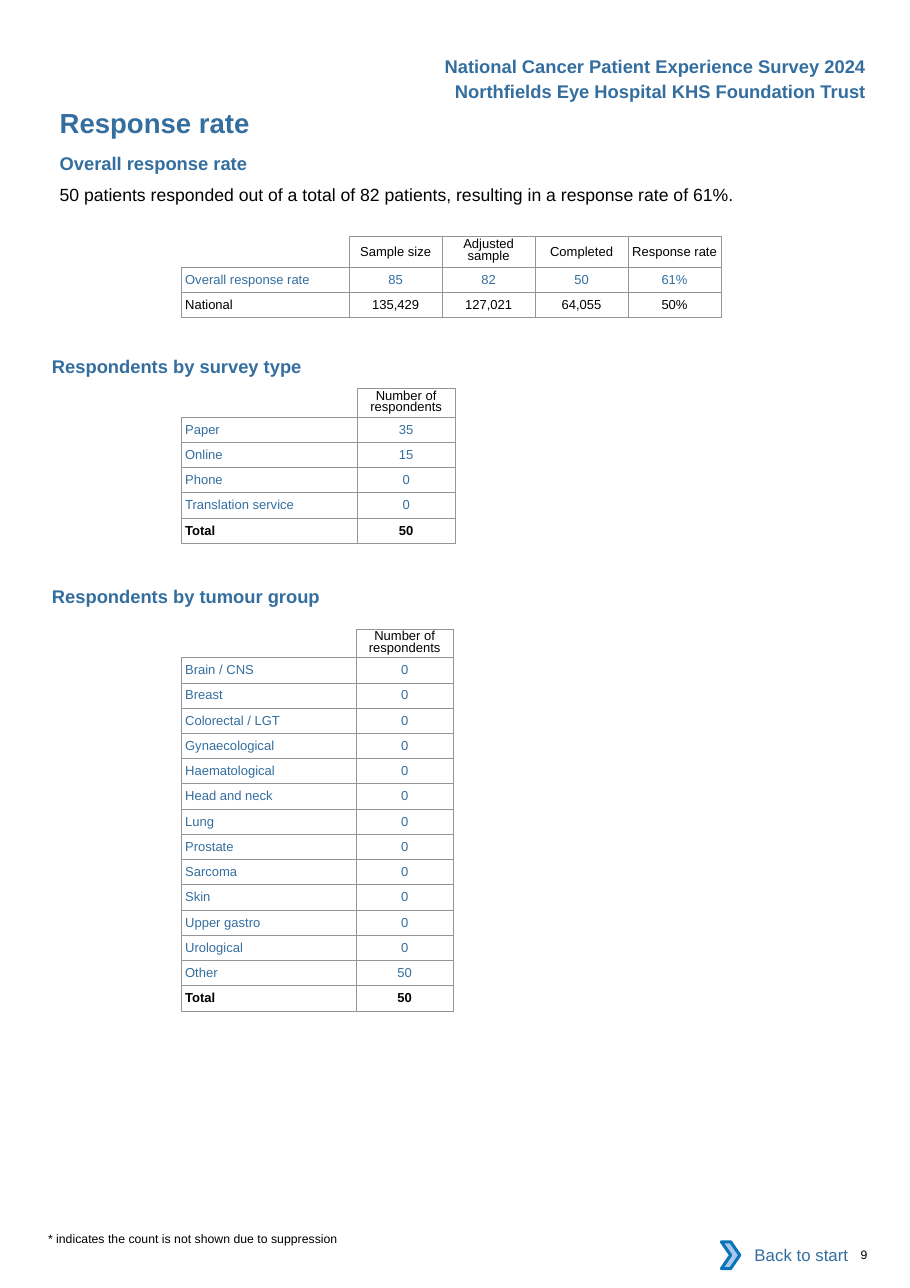
from lxml.etree import SubElement
from pptx import Presentation
from pptx.dml.color import RGBColor
from pptx.enum.shapes import MSO_SHAPE as SHAPE
from pptx.enum.text import MSO_ANCHOR as ANCHOR, PP_ALIGN as ALIGN
from pptx.oxml.ns import qn
from pptx.util import Pt

BLUE = RGBColor(0x33, 0x6E, 0x9F)
BLACK = RGBColor(0, 0, 0)
WHITE = RGBColor(255, 255, 255)
GREY = RGBColor(0x93, 0x95, 0x98)
CHEVRON_FILL = RGBColor(0xA8, 0xC7, 0xE9)
CHEVRON_LINE = RGBColor(0x0A, 0x74, 0xBB)
FONT = "Arial"
ROW_H = 16.5
TABLE_LEFT = 118.5

# Content
TITLE = "Response rate"
# text, left, top, width, height, size, colour, bold, alignment
TEXTS = [
    ("National Cancer Patient Experience Survey 2024", 266, 36.2, 300, 14, 12, BLUE, True, ALIGN.RIGHT),
    ("Northfields Eye Hospital KHS Foundation Trust", 266, 52.5, 300, 14, 12, BLUE, True, ALIGN.RIGHT),
    ("Overall response rate", 39, 99.5, 297, 14, 12, BLUE, True, ALIGN.LEFT),
    ("50 patients responded out of a total of 82 patients, resulting in a response rate of 61%.",
     39, 120.5, 518, 14, 11.5, BLACK, False, ALIGN.LEFT),
    ("Respondents by survey type", 34, 232, 200, 14, 12, BLUE, True, ALIGN.LEFT),
    ("Respondents by tumour group", 34, 382.5, 200, 14, 12, BLUE, True, ALIGN.LEFT),
    ("* indicates the count is not shown due to suppression", 31.4, 804.5, 220, 10, 8, BLACK, False, ALIGN.LEFT),
    ("9", 562.5, 815, 28, 10, 8, BLACK, False, ALIGN.LEFT),
]
OVERALL = [
    ("", "Sample size", "Adjusted sample", "Completed", "Response rate"),
    ("Overall response rate", "85", "82", "50", "61%"),
    ("National", "135,429", "127,021", "64,055", "50%"),
]
COUNT_HEADER = ("", "Number of respondents")
SURVEY_TYPES = [
    COUNT_HEADER,
    ("Paper", "35"),
    ("Online", "15"),
    ("Phone", "0"),
    ("Translation service", "0"),
    ("Total", "50"),
]
EMPTY_GROUPS = [
    "Brain / CNS", "Breast", "Colorectal / LGT", "Gynaecological", "Haematological", "Head and neck",
    "Lung", "Prostate", "Sarcoma", "Skin", "Upper gastro", "Urological",
]
TUMOUR_GROUPS = [COUNT_HEADER, *((group, "0") for group in EMPTY_GROUPS), ("Other", "50"), ("Total", "50")]
# rows, top, header height, column widths
TABLES = [
    (OVERALL, 154.5, 20, (109.75, 60.75, 60.75, 60.75, 60.75)),
    (SURVEY_TYPES, 254, 18.5, (115, 64)),
    (TUMOUR_GROUPS, 411.25, 18.5, (114.25, 63.5)),
]
WRAPPED_HEADERS = ("Adjusted sample", "Number of respondents")


def write(p, text, size, color, bold=False, align=ALIGN.LEFT):
    p.text = text
    p.alignment = align
    p.font.name, p.font.size, p.font.bold = FONT, Pt(size), bold
    p.font.color.rgb = color


def clear_margins(frame):
    frame.margin_left = frame.margin_right = frame.margin_top = frame.margin_bottom = 0


def set_borders(cell, sides):
    tc_pr = cell._tc.get_or_add_tcPr()
    for side in "LRTB":
        ln = SubElement(tc_pr, qn(f"a:ln{side}"), w=str(Pt(0.5)))
        if side in sides:
            fill = SubElement(ln, qn("a:solidFill"))
            SubElement(fill, qn("a:srgbClr"), val=str(GREY))
        else:
            SubElement(ln, qn("a:noFill"))


def add_grid(s, rows, top, header_h, widths):
    height = header_h + ROW_H * (len(rows) - 1)
    table = s.shapes.add_table(len(rows), len(widths), Pt(TABLE_LEFT), Pt(top),
                               Pt(sum(widths)), Pt(height)).table
    table.first_row = table.horz_banding = False
    for column, width in zip(table.columns, widths):
        column.width = Pt(width)
    for i, row in enumerate(rows):
        table.rows[i].height = Pt(ROW_H if i else header_h)
        for j, text in enumerate(row):
            cell = table.cell(i, j)
            clear_margins(cell)
            cell.vertical_anchor = ANCHOR.MIDDLE
            set_borders(cell, "LRTB" if i or j else "RB")
            cell.fill.background()
            black = i == 0 or row[0] in ("National", "Total")
            p = cell.text_frame.paragraphs[0]
            write(p, text, 8.5, BLACK if black else BLUE, row[0] == "Total",
                  ALIGN.CENTER if j else ALIGN.LEFT)
            if j == 0:
                cell.margin_left = Pt(2.5)
            if not text:
                p._p.get_or_add_endParaRPr().set("sz", "850")
            if text in WRAPPED_HEADERS:
                cell.margin_left = cell.margin_right = Pt(6)
                p.line_spacing = Pt(7.6)


def add_block(s, kind, left, top, width, height, fill):
    sp = s.shapes.add_shape(kind, Pt(left), Pt(top), Pt(width), Pt(height))
    sp.shadow.inherit = False
    sp.fill.solid()
    sp.fill.fore_color.rgb = fill
    sp.line.fill.background()
    return sp


prs = Presentation()
prs.slide_width, prs.slide_height = Pt(594.72), Pt(841.68)
s = prs.slides.add_slide(prs.slide_layouts[5])

# Title
title = s.shapes.title
title.left, title.top, title.width, title.height = Pt(39), Pt(69.25), Pt(297), Pt(21)
clear_margins(title.text_frame)
title.text_frame.vertical_anchor = ANCHOR.TOP
write(title.text_frame.paragraphs[0], TITLE, 18, BLUE, True)

# Headings, body text and footer
for text, left, top, width, height, size, color, bold, align in TEXTS:
    tf = s.shapes.add_textbox(Pt(left), Pt(top), Pt(width), Pt(height)).text_frame
    tf.word_wrap = True
    clear_margins(tf)
    write(tf.paragraphs[0], text, size, color, bold, align)

# Tables
for rows, top, header_h, widths in TABLES:
    add_grid(s, rows, top, header_h, widths)

# Back to start button
button = add_block(s, SHAPE.RECTANGLE, 476.5, 805, 85, 30, WHITE)
button.text_frame.vertical_anchor = ANCHOR.MIDDLE
write(button.text_frame.paragraphs[0], "Back to start", 11, BLUE, align=ALIGN.RIGHT)
chevron = add_block(s, SHAPE.CHEVRON, 471.5, 811.5, 12, 17.5, CHEVRON_FILL)
chevron.line.color.rgb = CHEVRON_LINE
chevron.line.width = Pt(2)

prs.save("out.pptx")
